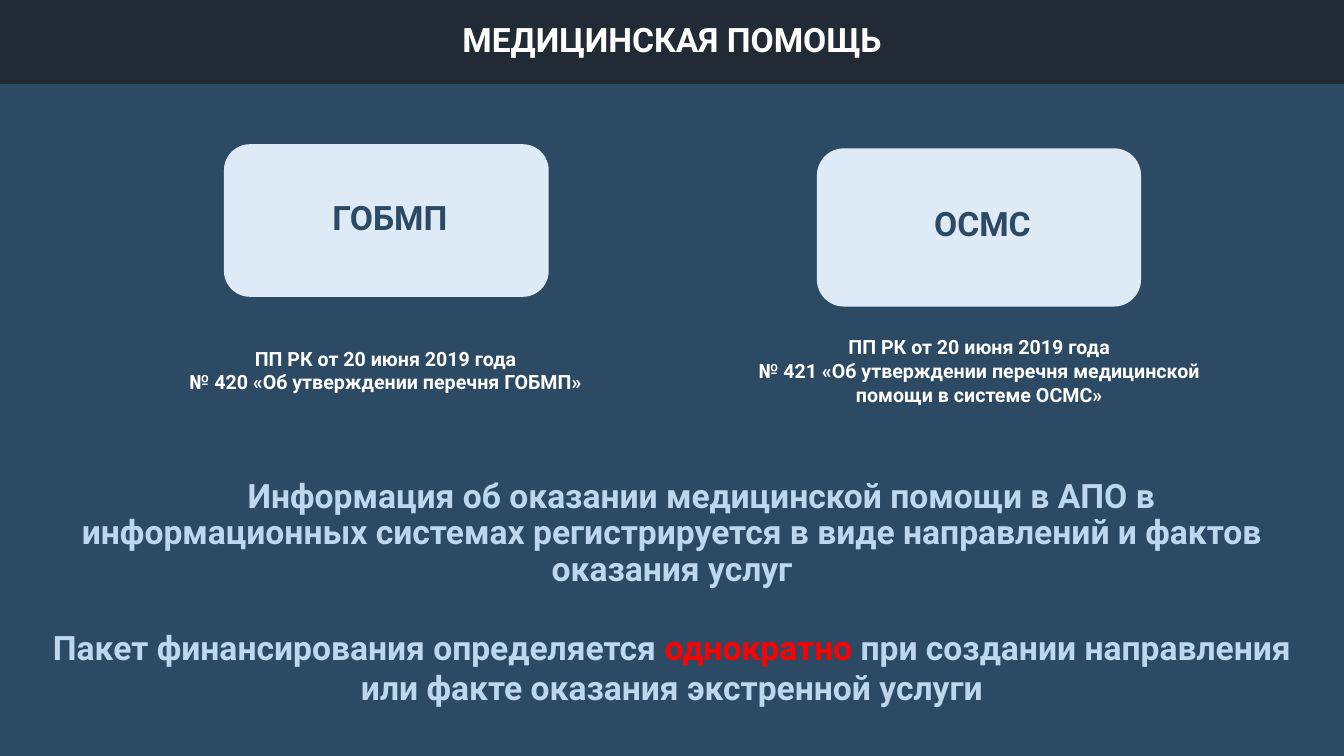
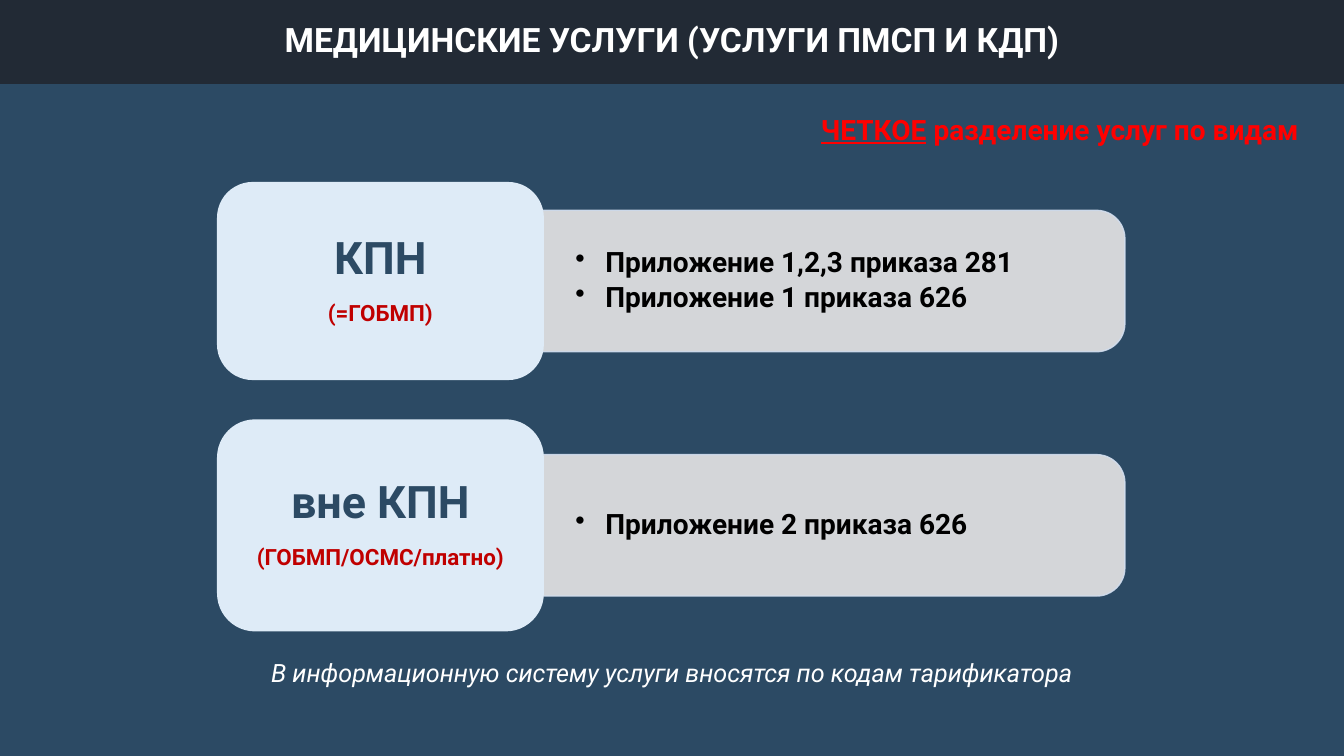
"""Build two slides on medical care packages and the kinds of medical services."""
from lxml import etree
from pptx import Presentation
from pptx.dml.color import RGBColor
from pptx.enum import shapes, text
from pptx.oxml import ns
from pptx.util import Pt

FONT = "Roboto"
COLORS = {
    "background": "2C4A64", "band": "222A35", "card": "DEEBF7", "panel": "E7E6E6",
    "panel_line": "D2DEEF", "white": "FFFFFF", "black": "000000", "pale": "BDD7EE",
    "red": "FF0000", "dark_red": "C00000",
}
SLIDE_WIDTH, SLIDE_HEIGHT = 960, 540
BAND_HEIGHT = 60
CENTER, LEFT = text.PP_ALIGN.CENTER, text.PP_ALIGN.LEFT

CARE_TITLE = "МЕДИЦИНСКАЯ ПОМОЩЬ"
PACKAGES = [
    {"name": "ГОБМП", "card": (160, 103, 232, 109), "note_box": (95, 244, 361, 41),
     "note": ["ПП РК от 20 июня 2019 года", "№ 420 «Об утверждении перечня ГОБМП»"]},
    {"name": "ОСМС", "card": (583.5, 106, 231.5, 113), "note_box": (533.5, 236, 332, 58),
     "note": ["ПП РК от 20 июня 2019 года",
              "№ 421 «Об утверждении перечня медицинской помощи в системе ОСМС»"]},
]
REGISTRATION = ("Информация об оказании медицинской помощи в АПО в информационных системах "
                "регистрируется в виде направлений и фактов оказания услуг")
FUNDING = [
    ("Пакет финансирования определяется ", "pale"),
    ("однократно", "red"),
    (" при создании направления или факте оказания экстренной услуги", "pale"),
]

SERVICES_TITLE = "МЕДИЦИНСКИЕ УСЛУГИ (УСЛУГИ ПМСП И КДП)"
SERVICES = [
    {"name": "КПН", "funding": "(=ГОБМП)", "top": 130, "height": 141.5,
     "sources": ["Приложение 1,2,3 приказа 281", "Приложение 1 приказа 626"]},
    {"name": "вне КПН", "funding": "(ГОБМП/ОСМС/платно)", "top": 299.5, "height": 151.5,
     "sources": ["Приложение 2 приказа 626"]},
]
DIVISION = [("ЧЕТКОЕ", "red"), (" разделение услуг по видам", "red")]
TARIFF_NOTE = "В информационную систему услуги вносятся по кодам тарификатора"
CARD_LEFT, CARD_WIDTH = 155, 233.5
PANEL_LEFT, PANEL_RIGHT, PANEL_HEIGHT = 364, 803.5, 101


def rgb(name):
    return RGBColor.from_string(COLORS[name])


def add_box(slide, kind, box, fill, corner=None):
    shape = slide.shapes.add_shape(kind, *map(Pt, box))
    shape.shadow.inherit = False
    shape.fill.solid()
    shape.fill.fore_color.rgb = rgb(fill)
    shape.line.fill.background()
    if corner is not None:
        shape.adjustments[0] = corner
    return shape


def add_card(slide, box, corner):
    return add_box(slide, shapes.MSO_SHAPE.ROUNDED_RECTANGLE, box, "card", corner)


def write(shape, paragraphs, size, color, bold=True, italic=False, align=CENTER,
          line_spacing=None, space_after=0, anchor=text.MSO_ANCHOR.MIDDLE):
    """Fill a shape with paragraphs, each a string or a list of (text, colour) runs."""
    frame = shape.text_frame
    frame.word_wrap = True
    frame.vertical_anchor = anchor
    for index, content in enumerate(paragraphs):
        paragraph = frame.add_paragraph() if index else frame.paragraphs[0]
        paragraph.alignment = align
        paragraph.line_spacing = line_spacing
        paragraph.space_before, paragraph.space_after = Pt(0), Pt(space_after)
        font = paragraph.font
        font.name, font.size, font.bold, font.italic = FONT, Pt(size), bold, italic
        font.color.rgb = rgb(color)
        runs = [(content, color)] if isinstance(content, str) else content
        for words, run_color in runs:
            run = paragraph.add_run()
            run.text = words
            if run_color != color:
                run.font.color.rgb = rgb(run_color)
    return frame


def add_text(slide, box, paragraphs, size, color, **style):
    style.setdefault("anchor", text.MSO_ANCHOR.TOP)
    shape = slide.shapes.add_textbox(*map(Pt, box))
    return write(shape, paragraphs, size, color, **style)


def set_margins(frame, left, top, right, bottom):
    frame.margin_left, frame.margin_top = Pt(left), Pt(top)
    frame.margin_right, frame.margin_bottom = Pt(right), Pt(bottom)


def add_bullet(paragraph, margin, hanging):
    properties = paragraph._p.get_or_add_pPr()
    properties.set("marL", str(Pt(margin)))
    properties.set("indent", str(-Pt(hanging)))
    bullet = etree.Element(ns.qn("a:buChar"), char="•")
    properties.find(ns.qn("a:defRPr")).addprevious(bullet)


def set_opacity(color_format_parent, percent):
    color = color_format_parent.find(ns.qn("a:solidFill"))[0]
    etree.SubElement(color, ns.qn("a:alpha"), val=str(percent * 1000))


def add_titled_slide(presentation, title_text):
    slide = presentation.slides.add_slide(presentation.slide_layouts[5])
    slide.background.fill.solid()
    slide.background.fill.fore_color.rgb = rgb("background")
    band = add_box(slide, shapes.MSO_SHAPE.RECTANGLE, (0, 0, SLIDE_WIDTH, BAND_HEIGHT), "band")
    title = slide.shapes.title
    title._element.addprevious(band._element)
    title.left, title.top, title.width, title.height = map(Pt, (123, 7, 714, 45))
    write(title, [title_text], 24, "white", line_spacing=0.9)
    return slide


def add_care_slide(presentation):
    slide = add_titled_slide(presentation, CARE_TITLE)
    for package in PACKAGES:
        card = add_card(slide, package["card"], 0.17)
        frame = write(card, [package["name"]], 24, "background", line_spacing=0.9)
        set_margins(frame, 5, 0, 0, 2)
        add_text(slide, package["note_box"], package["note"], 14, "white")
    registration = add_text(slide, (28, 339, 904, 86), [REGISTRATION], 24, "pale",
                            line_spacing=0.9)
    registration.paragraphs[0]._p.get_or_add_pPr().set("indent", str(Pt(42)))
    add_text(slide, (28, 444, 904, 66), [FUNDING], 24, "pale")


def add_service(slide, service):
    top, height = service["top"], service["height"]
    panel_top = top + (height - PANEL_HEIGHT) / 2
    panel = add_box(slide, shapes.MSO_SHAPE.ROUNDED_RECTANGLE,
                    (PANEL_LEFT, panel_top, PANEL_RIGHT - PANEL_LEFT, PANEL_HEIGHT),
                    "panel", 0.2)
    panel.line.color.rgb = rgb("panel_line")
    panel.line.width = Pt(1)
    properties = panel._element.spPr
    for parent in (properties, properties.find(ns.qn("a:ln"))):
        set_opacity(parent, 90)
    frame = write(panel, service["sources"], 20, "black", align=LEFT,
                  line_spacing=0.9, space_after=3)
    set_margins(frame, 20, 11, 20, 11)
    for paragraph in frame.paragraphs:
        add_bullet(paragraph, 42.5, 21.5)

    card = add_card(slide, (CARD_LEFT, top, CARD_WIDTH, height), 0.18)
    frame = write(card, [service["name"], service["funding"]], 32, "background",
                  line_spacing=0.9, space_after=13)
    set_margins(frame, 6, 4, 6, 4)
    funding = frame.paragraphs[1].font
    funding.size, funding.color.rgb = Pt(16), rgb("dark_red")
    frame.paragraphs[1].runs[0].font.color.rgb = rgb("dark_red")


def add_services_slide(presentation):
    slide = add_titled_slide(presentation, SERVICES_TITLE)
    for service in SERVICES:
        add_service(slide, service)
    add_text(slide, (123, 438, 714, 84), [TARIFF_NOTE], 18, "white", bold=False,
             italic=True, anchor=text.MSO_ANCHOR.MIDDLE)
    division = add_text(slide, (557, 76.5, 400, 31.5), [DIVISION], 20, "red")
    division.paragraphs[0].runs[0].font.underline = True


def main():
    presentation = Presentation()
    presentation.slide_width, presentation.slide_height = Pt(SLIDE_WIDTH), Pt(SLIDE_HEIGHT)
    add_care_slide(presentation)
    add_services_slide(presentation)
    presentation.save("out.pptx")


if __name__ == "__main__":
    main()
